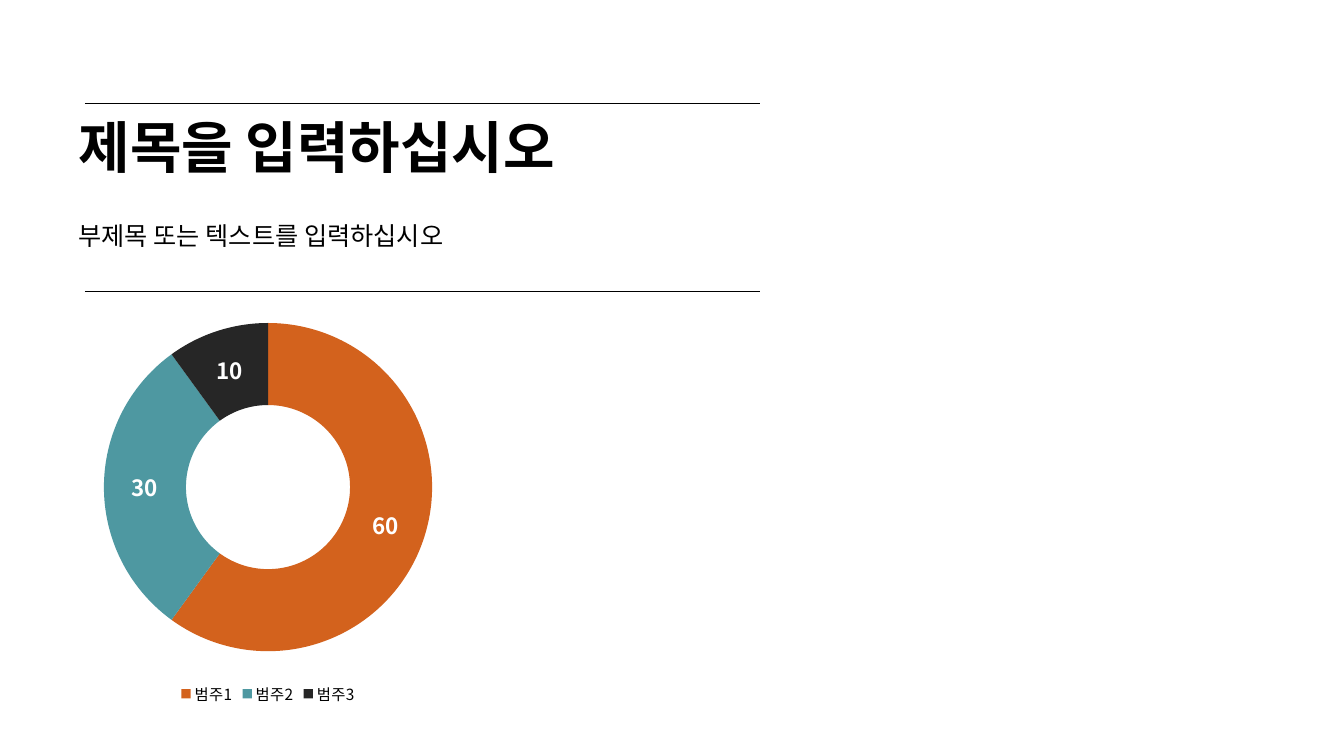
import pptx
import pptx.chart.data
import pptx.dml.color
import pptx.enum.chart
import pptx.enum.shapes
import pptx.enum.text
import pptx.oxml
import pptx.oxml.ns
import pptx.util
from pptx.util import Cm

RGBColor = pptx.dml.color.RGBColor
BLACK = RGBColor(0x00, 0x00, 0x00)
WHITE = RGBColor(0xFF, 0xFF, 0xFF)
ORANGE = RGBColor(0xD3, 0x62, 0x1D)
TEAL = RGBColor(0x4E, 0x98, 0xA1)
CHARCOAL = RGBColor(0x26, 0x26, 0x26)
FONT = "Noto Sans CJK KR"
qn = pptx.oxml.ns.qn


class SlideBuilder:
    """Holds the style and the current slide, and adds each kind of element."""

    def __init__(self, slide, font, color):
        self.slide = slide
        self.font = font
        self.color = color

    def style(self, font, size, color, bold=False):
        font.name = self.font
        font.size = pptx.util.Pt(size)
        font.bold = bold
        font.color.rgb = color

    def fill_text(self, sp, text, size, bold=False):
        tf = sp.text_frame
        tf.word_wrap = True
        tf.auto_size = pptx.enum.text.MSO_AUTO_SIZE.NONE
        tf.vertical_anchor = pptx.enum.text.MSO_ANCHOR.TOP
        p = tf.paragraphs[0]
        p.alignment = pptx.enum.text.PP_ALIGN.LEFT
        p.line_spacing = 0.9
        r = p.add_run()
        r.text = text
        self.style(r.font, size, self.color, bold)
        ea = r.font._element.makeelement(qn("a:ea"), {"typeface": self.font})
        r.font._element.find(qn("a:latin")).addnext(ea)

    def title(self, text, left, top, width, height, size):
        sp = self.slide.shapes.title
        sp.left, sp.top, sp.width, sp.height = left, top, width, height
        self.fill_text(sp, text, size, bold=True)

    def text(self, text, left, top, width, height, size):
        sp = self.slide.shapes.add_textbox(left, top, width, height)
        self.fill_text(sp, text, size)

    def rule(self, left, right, y):
        line = self.slide.shapes.add_connector(
            pptx.enum.shapes.MSO_CONNECTOR.STRAIGHT, left, y, right, y)
        line.line.color.rgb = self.color
        line.line.width = pptx.util.Pt(0.25)
        spPr = line._element.spPr
        spPr.append(spPr.makeelement(qn("a:effectLst"), {}))

    def doughnut(self, values, colors, left, top, width, height, plot_box):
        data = pptx.chart.data.CategoryChartData()
        data.categories = list(values)
        data.add_series("Series 1", list(values.values()))
        chart = self.slide.shapes.add_chart(
            pptx.enum.chart.XL_CHART_TYPE.DOUGHNUT, left, top, width, height, data).chart
        self.style(chart.font, 12, self.color)
        chart.has_title = False
        chart.has_legend = True
        chart.legend.position = pptx.enum.chart.XL_LEGEND_POSITION.BOTTOM
        chart.legend.include_in_layout = False
        self.style(chart.legend.font, 11, self.color)
        series = chart.plots[0].series[0]
        for i, color in enumerate(colors):
            fill = series.points[i].format.fill
            fill.solid()
            fill.fore_color.rgb = color
        labels = series.data_labels
        labels.show_value = True
        self.style(labels.font, 16, WHITE, bold=True)
        self.place_plot(chart, plot_box)

    def place_plot(self, chart, plot_box):
        area = chart._chartSpace.chart.plotArea
        for old in area.findall(qn("c:layout")):
            area.remove(old)
        settings = [("layoutTarget", "inner"), ("xMode", "edge"), ("yMode", "edge")]
        settings += zip("xywh", plot_box)
        items = "".join(f'<c:{tag} val="{val}"/>' for tag, val in settings)
        area.insert(0, pptx.oxml.parse_xml(
            f'<c:layout {pptx.oxml.ns.nsdecls("c")}>'
            f"<c:manualLayout>{items}</c:manualLayout></c:layout>"))


def main():
    prs = pptx.Presentation()
    prs.slide_width, prs.slide_height = Cm(33.87), Cm(19.05)
    s = prs.slides.add_slide(prs.slide_layouts[5])
    builder = SlideBuilder(s, FONT, BLACK)
    left, width = Cm(1.73), Cm(17.8)
    builder.title("제목을 입력하십시오", left, Cm(2.9), width, Cm(2.57), 40)
    builder.text("부제목 또는 텍스트를 입력하십시오", left, Cm(5.51), width, Cm(1.32), 18)
    builder.doughnut({"범주1": 60, "범주2": 30, "범주3": 10}, [ORANGE, TEAL, CHARCOAL],
                     Cm(1.14), Cm(7.52), Cm(11.23), Cm(10.34), (0.13, 0.06, 0.74, 0.8))
    for y in (Cm(2.6), Cm(7.34)):
        builder.rule(Cm(2.14), Cm(19.15), y)
    prs.save("out.pptx")


if __name__ == "__main__":
    main()
